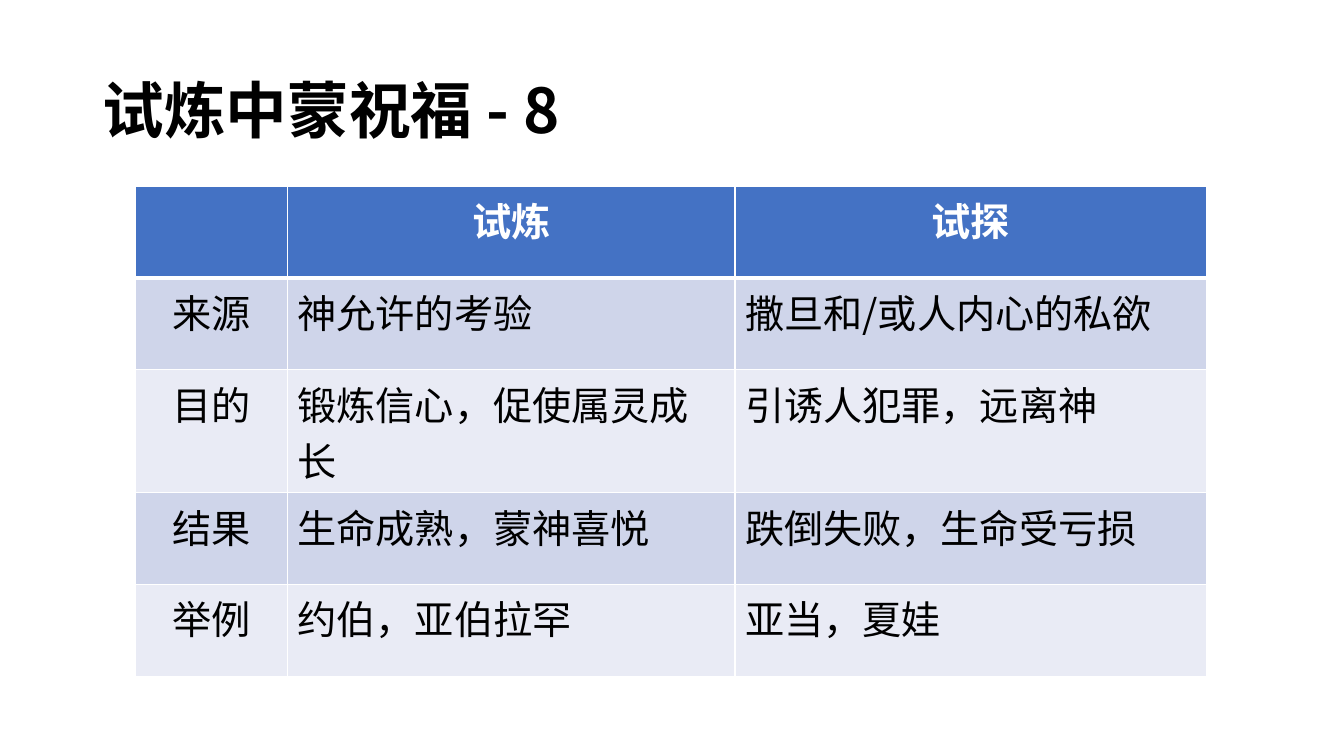
from lxml import etree
from pptx import Presentation
from pptx import util as u
from pptx.dml.color import RGBColor
from pptx.enum import lang, text
from pptx.oxml.ns import qn

PX = 9144  # EMU per px, 100 px to the inch


def px(length):
    return u.Emu(length * PX)


def colour(hex_code):
    return RGBColor.from_string(hex_code)


class ComparisonSlide:
    FONT = "Noto Sans CJK TC"
    BLACK, WHITE = "000000", "FFFFFF"
    HEADER = "4472C4"
    BANDS = ("CFD5EA", "E9EBF5")
    TITLE_SIZE, CELL_SIZE = 44, 28
    THIN, THICK = 1, 3

    def __init__(self, deck):
        self.slide = deck.slides.add_slide(deck.slide_layouts[6])

    def run(self, paragraph, words, size, ink, bold=False):
        run = paragraph.add_run()
        run.text = words
        font = run.font
        font.name, font.size, font.bold = self.FONT, u.Pt(size), bold
        font.language_id = lang.MSO_LANGUAGE_ID.SIMPLIFIED_CHINESE
        font.color.rgb = colour(ink)
        east_asian = etree.Element(qn("a:ea"), typeface=self.FONT)
        font._element.find(qn("a:latin")).addnext(east_asian)

    def title(self, words, left, top, width, height):
        frame = self.slide.shapes.add_textbox(
            px(left), px(top), px(width), px(height)).text_frame
        frame.word_wrap = True
        frame.vertical_anchor = text.MSO_ANCHOR.MIDDLE
        heading = frame.paragraphs[0]
        heading.line_spacing = 0.9
        self.run(heading, words, self.TITLE_SIZE, self.BLACK, bold=True)

    def borders(self, cell, top, bottom):
        properties = cell._tc.get_or_add_tcPr()
        edges = {"lnL": self.THIN, "lnR": self.THIN, "lnT": top, "lnB": bottom}
        # Border lines come before the fill in the cell properties
        for position, (edge, points) in enumerate(edges.items()):
            line = etree.Element(qn(f"a:{edge}"), w=str(u.Pt(points)))
            fill = etree.SubElement(line, qn("a:solidFill"))
            etree.SubElement(fill, qn("a:srgbClr"), val=self.WHITE)
            properties.insert(position, line)

    def cell(self, cell, words, row, column):
        is_header = row == 0
        cell.fill.solid()
        cell.fill.fore_color.rgb = colour(
            self.HEADER if is_header else self.BANDS[(row - 1) % 2])
        self.borders(cell,
                     top=self.THICK if row == 1 else self.THIN,
                     bottom=self.THICK if is_header else self.THIN)
        paragraph = cell.text_frame.paragraphs[0]
        if is_header or column == 0:
            paragraph.alignment = text.PP_ALIGN.CENTER
        if words:
            self.run(paragraph, words, self.CELL_SIZE,
                     self.WHITE if is_header else self.BLACK, bold=is_header)

    def table(self, rows, left, top, column_widths, row_heights):
        table = self.slide.shapes.add_table(
            len(rows), len(column_widths), px(left), px(top),
            px(sum(column_widths)), px(sum(row_heights))).table
        for column, width in zip(table.columns, column_widths):
            column.width = px(width)
        for r, (row, height) in enumerate(zip(rows, row_heights)):
            table.rows[r].height = px(height)
            for c, words in enumerate(row):
                self.cell(table.cell(r, c), words, r, c)


def main():
    deck = Presentation()
    deck.slide_width, deck.slide_height = px(1333), px(750)
    slide = ComparisonSlide(deck)

    # Heading
    slide.title("试炼中蒙祝福 - 8", 92, 40, 1150, 145)

    # Trial and temptation side by side; the purpose row holds two lines
    comparison = [
        ("", "试炼", "试探"),
        ("来源", "神允许的考验", "撒旦和/或人内心的私欲"),
        ("目的", "锻炼信心，促使属灵成长", "引诱人犯罪，远离神"),
        ("结果", "生命成熟，蒙神喜悦", "跌倒失败，生命受亏损"),
        ("举例", "约伯，亚伯拉罕", "亚当，夏娃"),
    ]
    one_line, two_lines = 91, 122
    slide.table(comparison, 134, 185, column_widths=(151, 444, 468),
                row_heights=(one_line, one_line, two_lines, one_line, one_line))

    deck.save("out.pptx")


if __name__ == "__main__":
    main()
